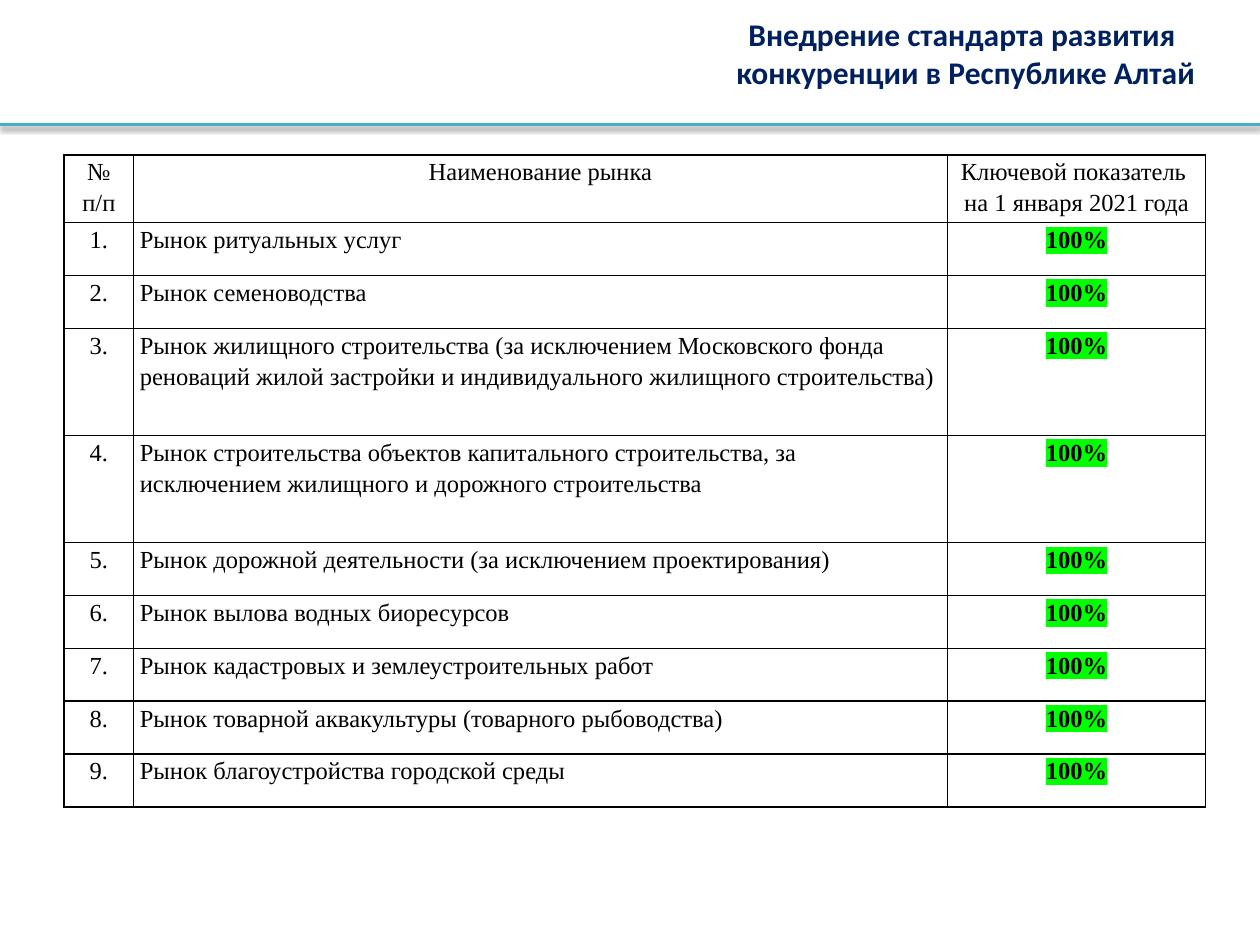
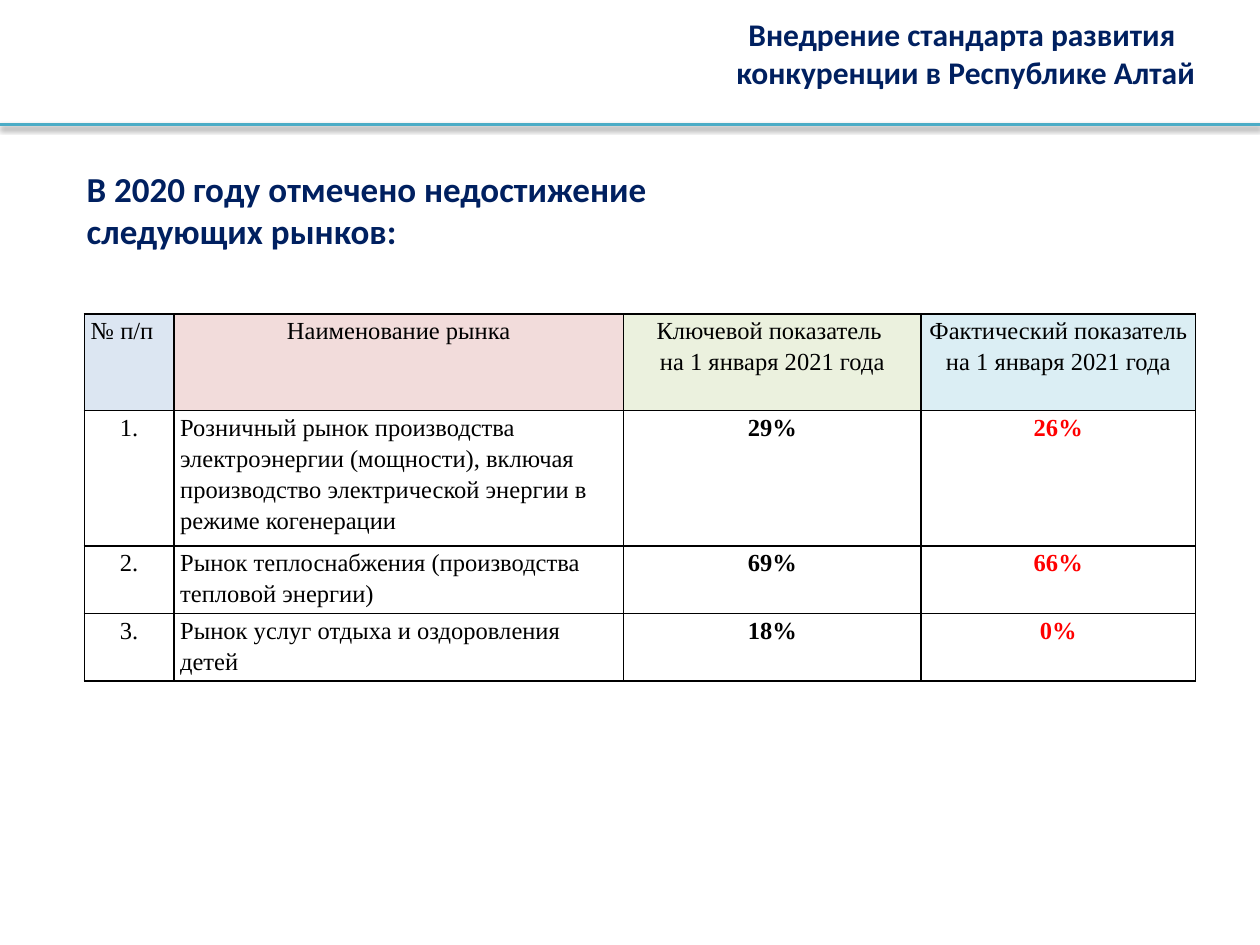
import pptx
import pptx.util
import pptx.dml.color
import pptx.enum.shapes
import pptx.enum.text
import pptx.oxml
import pptx.oxml.ns

Inches = pptx.util.Inches
Pt = pptx.util.Pt
ALIGN = pptx.enum.text.PP_ALIGN
LEFT, MID = ALIGN.LEFT, ALIGN.CENTER

HUES = {
    "navy": "002060", "teal": "4BACC6", "black": "000000", "red": "FF0000",
    "lime": "00FF00", "blue": "DCE6F2", "pink": "F2DCDB",
    "olive": "EBF1DE", "aqua": "DBEEF4",
}
NS = pptx.oxml.ns.nsdecls("a")

TITLE = ["Внедрение стандарта развития ", "конкуренции в Республике Алтай"]
LEAD = ["В 2020 году отмечено недостижение", "следующих рынков:"]
DATE = "на 1 января 2021 года"
KEY = ["Ключевой показатель ", DATE]
FACT = ["Фактический показатель ", DATE]
NAME = ["Наименование рынка"]

MET = [
    "Рынок ритуальных услуг",
    "Рынок семеноводства",
    "Рынок жилищного строительства (за исключением Московского фонда "
    "реноваций жилой застройки и индивидуального жилищного строительства)",
    "Рынок строительства объектов капитального строительства, "
    "за исключением жилищного и дорожного строительства",
    "Рынок дорожной деятельности (за исключением проектирования)",
    "Рынок вылова водных биоресурсов",
    "Рынок кадастровых и землеустроительных работ",
    "Рынок товарной аквакультуры (товарного рыбоводства)",
    "Рынок благоустройства городской среды",
]
MISSED = [
    ("Розничный рынок производства электроэнергии (мощности), включая "
     "производство электрической энергии в режиме когенерации", "29%", "26%"),
    ("Рынок теплоснабжения (производства тепловой энергии)", "69%", "66%"),
    ("Рынок услуг отдыха и оздоровления детей", "18%", "0%"),
]


def tint(name):
    return pptx.dml.color.RGBColor.from_string(HUES[name])


def write(frame, lines, face, size, hue="black", bold=False, align=LEFT, space=None):
    frame.word_wrap = True
    for i, line in enumerate(lines):
        para = frame.paragraphs[0] if i == 0 else frame.add_paragraph()
        para.add_run().text = line
        para.alignment = align
        para.line_spacing = space
        font = para.font
        font.name, font.size, font.bold = face, Pt(size), bold
        font.color.rgb = tint(hue)


def add_text(slide, lines, box, size, align=LEFT):
    shape = slide.shapes.add_textbox(*map(Inches, box))
    write(shape.text_frame, lines, "Calibri", size, "navy", True, align)


def add_rule(slide):
    """Draw the shadowed line under the slide title."""
    rule = slide.shapes.add_connector(
        pptx.enum.shapes.MSO_CONNECTOR.STRAIGHT,
        Inches(0), Inches(0.99), Inches(10), Inches(0.99))
    rule.line.color.rgb = tint("teal")
    rule.line.width = Pt(2)
    rule._element.spPr.append(pptx.oxml.parse_xml(
        f'<a:effectLst {NS}><a:outerShdw blurRad="{Pt(3.1)}" dist="{Pt(1.6)}" '
        f'dir="5400000" rotWithShape="0"><a:srgbClr val="{HUES["black"]}">'
        '<a:alpha val="38000"/></a:srgbClr></a:outerShdw></a:effectLst>'))


def add_edges(cell):
    props = cell._tc.get_or_add_tcPr()
    for i, side in enumerate("LRTB"):
        props.insert(i, pptx.oxml.parse_xml(
            f'<a:ln{side} {NS} w="{Pt(1)}"><a:solidFill>'
            f'<a:srgbClr val="{HUES["black"]}"/></a:solidFill></a:ln{side}>'))


def mark(cell):
    """Highlight the cell's text."""
    run = cell.text_frame.paragraphs[0].runs[0]
    run.font._element.append(pptx.oxml.parse_xml(
        f'<a:highlight {NS}><a:srgbClr val="{HUES["lime"]}"/></a:highlight>'))


def fill_cell(cell, lines, align=MID, back=None, **style):
    cell.margin_left = cell.margin_right = Inches(0.05)
    cell.margin_top = cell.margin_bottom = 0
    write(cell.text_frame, lines, "Times New Roman", 14,
          align=align, space=1.15, **style)
    if back:
        cell.fill.solid()
        cell.fill.fore_color.rgb = tint(back)
    else:
        cell.fill.background()
    add_edges(cell)


def add_grid(slide, left, top, widths, heights):
    grid = slide.shapes.add_table(
        len(heights), len(widths), Inches(left), Inches(top),
        Inches(sum(widths)), Inches(sum(heights))).table
    grid.first_row = grid.horz_banding = False
    for col, width in zip(grid.columns, widths):
        col.width = Inches(width)
    for row, height in zip(grid.rows, heights):
        row.height = Inches(height)
    return grid


def add_page(deck):
    slide = deck.slides.add_slide(deck.slide_layouts[6])
    add_rule(slide)
    add_text(slide, TITLE, (4.76, 0.07, 5.81, 0.71), 18, MID)
    return slide


def add_met(deck):
    slide = add_page(deck)
    heights = [0.49] + [0.85 if len(name) > 80 else 0.42 for name in MET]
    grid = add_grid(slide, 0.51, 1.23, [0.55, 6.46, 2.05], heights)
    for col, lines in enumerate([["№ п/п"], NAME, KEY]):
        fill_cell(grid.cell(0, col), lines)
    for row, name in enumerate(MET, 1):
        fill_cell(grid.cell(row, 0), [f"{row}."])
        fill_cell(grid.cell(row, 1), [name], LEFT)
        fill_cell(grid.cell(row, 2), ["100%"], bold=True)
        mark(grid.cell(row, 2))


def add_missed(deck):
    slide = add_page(deck)
    add_text(slide, LEAD, (0.59, 1.28, 6.77, 0.77), 20)
    grid = add_grid(slide, 0.67, 2.49, [0.71, 3.57, 2.36, 2.18],
                    [0.77, 0.98, 0.49, 0.49])
    heads = [(["№ п/п"], LEFT, "blue"), (NAME, MID, "pink"),
             (KEY, MID, "olive"), (FACT, MID, "aqua")]
    for col, head in enumerate(heads):
        fill_cell(grid.cell(0, col), *head)
    for row, (name, goal, fact) in enumerate(MISSED, 1):
        fill_cell(grid.cell(row, 0), [f"{row}."])
        fill_cell(grid.cell(row, 1), [name], LEFT)
        fill_cell(grid.cell(row, 2), [goal], bold=True)
        fill_cell(grid.cell(row, 3), [fact], bold=True, hue="red")


def main():
    deck = pptx.Presentation()
    deck.slide_width, deck.slide_height = Inches(10), Inches(7.5)
    add_met(deck)
    add_missed(deck)
    deck.save("out.pptx")


if __name__ == "__main__":
    main()
